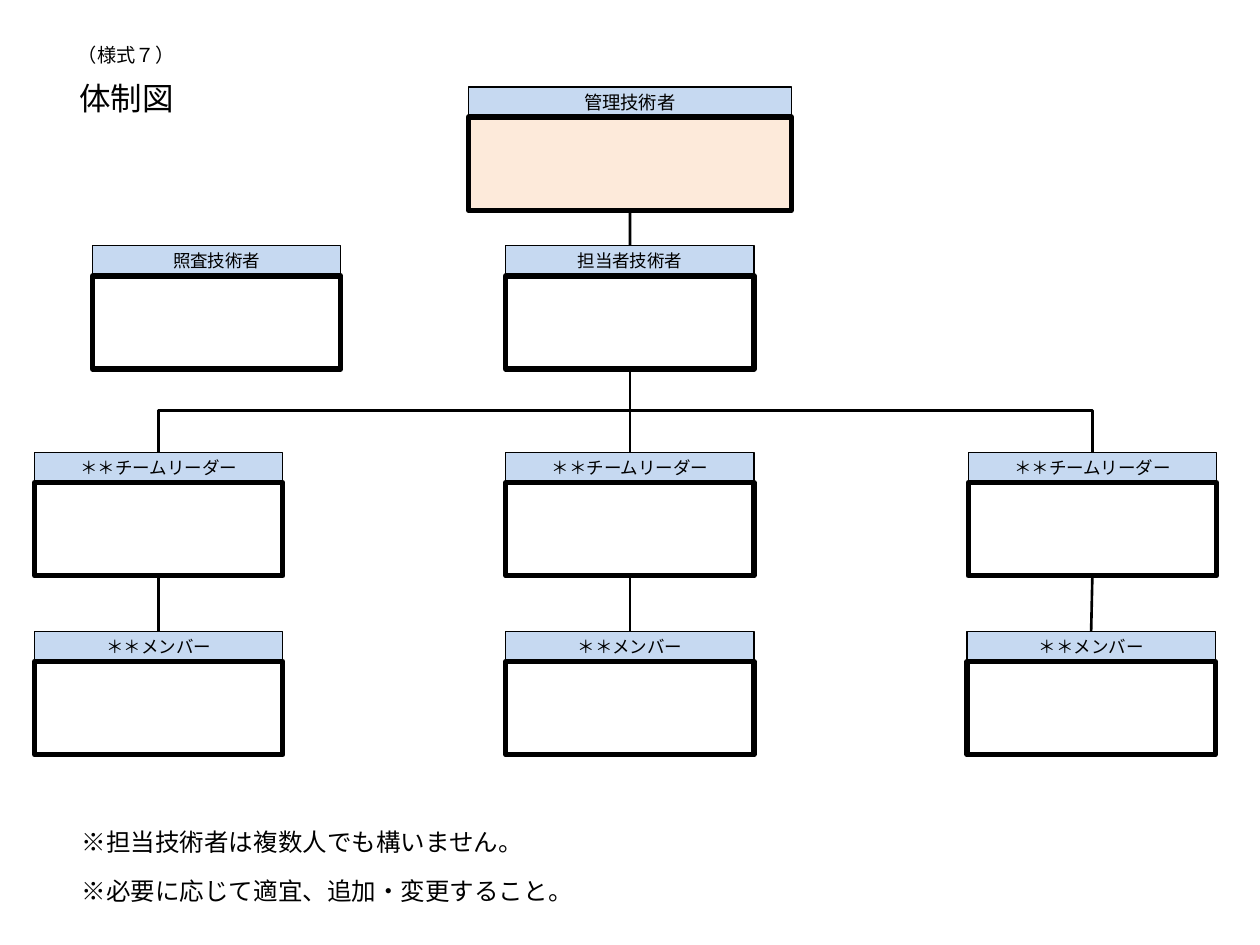
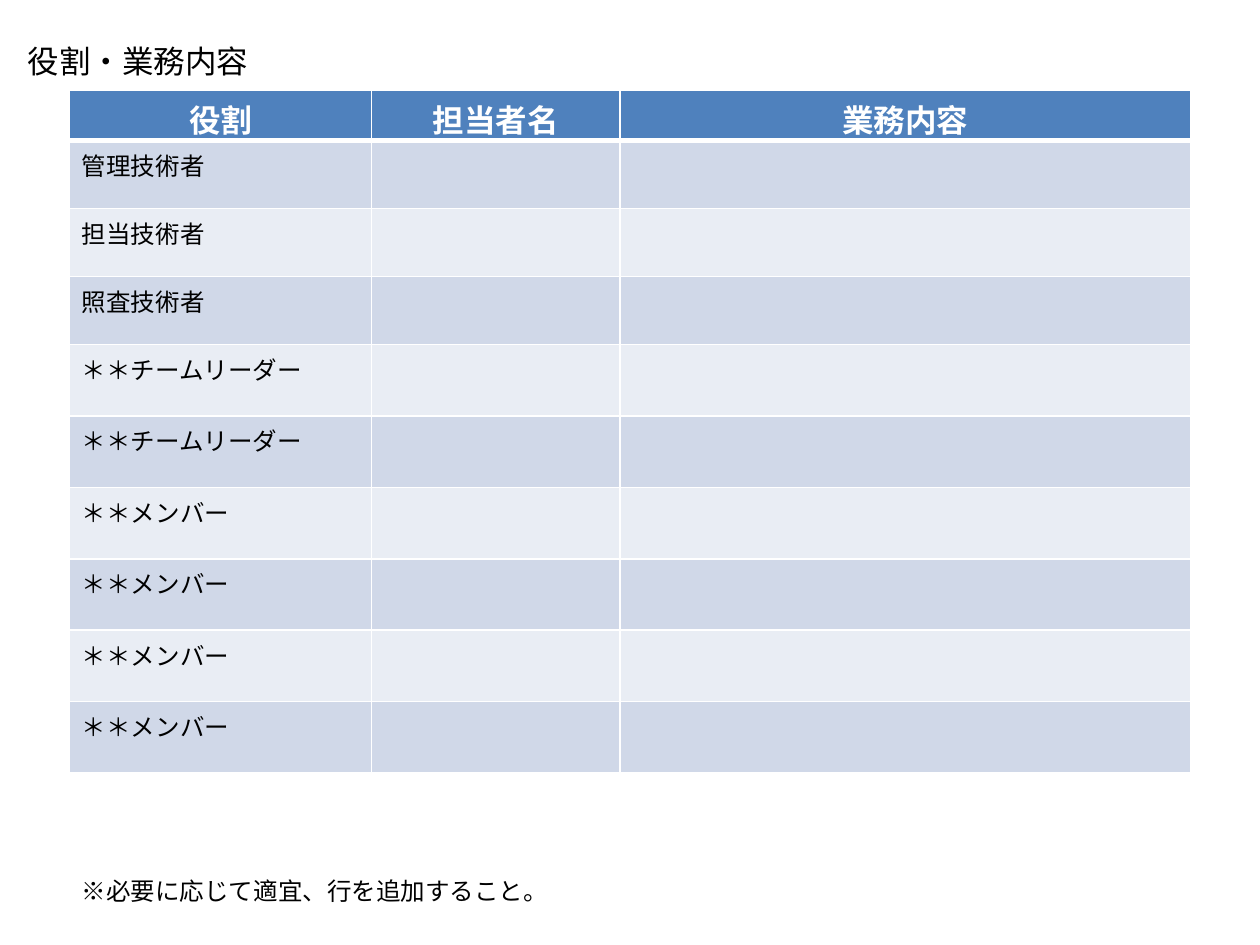
from lxml import etree
from pptx import Presentation
from pptx.dml.color import RGBColor
from pptx.enum.shapes import MSO_CONNECTOR, MSO_SHAPE
from pptx.enum.text import MSO_ANCHOR, MSO_AUTO_SIZE, PP_ALIGN
from pptx.oxml.ns import qn
from pptx.util import Inches, Pt

RECT = MSO_SHAPE.RECTANGLE
STRAIGHT, ELBOW = MSO_CONNECTOR.STRAIGHT, MSO_CONNECTOR.ELBOW
MIDDLE, TOP = MSO_ANCHOR.MIDDLE, MSO_ANCHOR.TOP
LEFT, CENTER = PP_ALIGN.LEFT, PP_ALIGN.CENTER
NO_FIT = MSO_AUTO_SIZE.NONE

FONT = "Noto Sans CJK JP"
COLORS = {
    "ink": "000000",
    "paper": "FFFFFF",
    "label": "C6D9F1",
    "chief": "FDEADA",
    "head": "4F81BD",
    "odd": "D0D8E8",
    "even": "E9EDF4",
}
TOP_SIDE, BOTTOM_SIDE = 0, 2
LABEL_H, BODY_H = 0.24, 0.74
BOX_W = 1.97
LEADER, MEMBER = "＊＊チームリーダー", "＊＊メンバー"
ROLES = ["管理技術者", "担当技術者", "照査技術者"] + [LEADER] * 2 + [MEMBER] * 4
HEADS = ["役割", "担当者名", "業務内容"]
COL_WIDTHS = [2.4, 1.97, 4.53]
ROW_HEIGHTS = [0.39] + [0.54] * 3 + [3.4 / 6] * 6


def color(name):
    return RGBColor.from_string(COLORS[name])


def add_run(para, text, size, ink="ink", bold=False, align=LEFT):
    para.alignment = align
    run = para.add_run()
    run.text = text
    font = run.font
    font.name, font.size, font.bold = FONT, Pt(size), bold
    font.color.rgb = color(ink)
    east = etree.SubElement(font._element, qn("a:ea"))
    east.set("typeface", FONT)


def set_frame(frame, wrap):
    frame.word_wrap = wrap
    frame.auto_size = NO_FIT
    frame.vertical_anchor = MIDDLE


def add_title(slide, text, left, top, width):
    title = slide.shapes.title
    title.left, title.top = Inches(left), Inches(top)
    title.width, title.height = Inches(width), Inches(0.4)
    set_frame(title.text_frame, True)
    add_run(title.text_frame.paragraphs[0], text, 18)


def add_text(slide, text, left, top, width, height, size):
    box = slide.shapes.add_textbox(*map(Inches, (left, top, width, height)))
    set_frame(box.text_frame, True)
    add_run(box.text_frame.paragraphs[0], text, size)


def add_note(slide, text, top=6.9):
    add_text(slide, text, 0.55, top, 5.71, 0.34, 14)


def add_rect(shapes, left, top, width, height, fill, weight):
    rect = shapes.add_shape(RECT, *map(Inches, (left, top, width, height)))
    rect.shadow.inherit = False
    rect.fill.solid()
    rect.fill.fore_color.rgb = color(fill)
    rect.line.color.rgb = color("ink")
    rect.line.width = Pt(weight)
    return rect


def add_post(slide, text, mid, top, width=BOX_W, fill="paper", size=10):
    """Add a labelled box centred on mid; return its label and its body."""
    shapes = slide.shapes.add_group_shape().shapes
    left = mid - width / 2
    label = add_rect(shapes, left, top, width, LABEL_H, "label", 0.75)
    body = add_rect(shapes, left, top + LABEL_H, width, BODY_H, fill, 3)
    frame = label.text_frame
    set_frame(frame, False)
    frame.margin_top = frame.margin_bottom = 0
    add_run(frame.paragraphs[0], text, size, align=CENTER)
    return label, body


def join(slide, upper, lower, kind=STRAIGHT):
    """Link the bottom of one post to the top of another."""
    line = slide.shapes.add_connector(kind, 0, 0, 0, 0)
    line.begin_connect(upper[1], BOTTOM_SIDE)
    line.end_connect(lower[0], TOP_SIDE)
    line.line.color.rgb = color("ink")
    line.line.width = Pt(1.5)
    etree.SubElement(line._element.spPr, qn("a:effectLst"))
    return line


def join_bent(slide, upper, lower):
    """Link two posts by an elbow that leaves downwards."""
    line = join(slide, upper, lower, ELBOW)
    to_right = line.end_x > line.begin_x
    wide, high = line.width, line.height
    mid_x, mid_y = line.left + wide // 2, line.top + high // 2
    line.left, line.top = mid_x - high // 2, mid_y - wide // 2
    line.width, line.height = high, wide
    xfrm = line._element.spPr.find(qn("a:xfrm"))
    xfrm.set("rot", str((270 if to_right else 90) * 60000))
    xfrm.set("flipH", "1" if to_right else "0")


def set_borders(cell, bottom):
    props = cell._tc.get_or_add_tcPr()
    for spot, side in enumerate("LRTB"):
        edge = etree.Element(qn("a:ln" + side))
        edge.set("w", str(Pt(bottom if side == "B" else 1)))
        fill = etree.SubElement(edge, qn("a:solidFill"))
        etree.SubElement(fill, qn("a:srgbClr")).set("val", COLORS["paper"])
        props.insert(spot, edge)


def set_cell(cell, fill, bottom=1):
    cell.fill.solid()
    cell.fill.fore_color.rgb = color(fill)
    cell.vertical_anchor = TOP
    set_borders(cell, bottom)


def add_roles(slide):
    area = map(Inches, (0.55, 0.72, sum(COL_WIDTHS), sum(ROW_HEIGHTS)))
    table = slide.shapes.add_table(len(ROW_HEIGHTS), len(HEADS), *area).table
    for col, width in zip(table.columns, COL_WIDTHS):
        col.width = Inches(width)
    for row, height in zip(table.rows, ROW_HEIGHTS):
        row.height = Inches(height)
    for col, text in enumerate(HEADS):
        cell = table.cell(0, col)
        set_cell(cell, "head", 3)
        cell.margin_top, cell.margin_bottom = Inches(0.07), 0
        para = cell.text_frame.paragraphs[0]
        para.line_spacing = 0.9
        add_run(para, text, 18, "paper", True, CENTER)
    for row, role in enumerate(ROLES, 1):
        for col in range(len(HEADS)):
            set_cell(table.cell(row, col), "odd" if row % 2 else "even")
        add_run(table.cell(row, 0).text_frame.paragraphs[0], role, 14)


def build_chart(slide):
    add_title(slide, "体制図", 0.53, 0.58, 1.2)
    add_text(slide, "（様式７）", 0.52, 0.29, 1.2, 0.29, 11)
    chief = add_post(slide, "管理技術者", 5, 0.69, 2.56, "chief", 10.5)
    add_post(slide, "照査技術者", 1.72, 1.95)
    staff = add_post(slide, "担当者技術者", 5, 1.95)
    join(slide, chief, staff)
    for lead_x, member_x in ((1.26, 1.26), (5, 5), (8.67, 8.66)):
        leader = add_post(slide, LEADER, lead_x, 3.59)
        member = add_post(slide, MEMBER, member_x, 5.01)
        join(slide, leader, member)
        link = join if lead_x == 5 else join_bent
        link(slide, staff, leader)
    add_note(slide, "※担当技術者は複数人でも構いません。", 6.51)
    add_note(slide, "※必要に応じて適宜、追加・変更すること。")


def build_roles(slide):
    add_title(slide, "役割・業務内容", 0.12, 0.28, 3.78)
    add_roles(slide)
    add_note(slide, "※必要に応じて適宜、行を追加すること。")


def main():
    deck = Presentation()
    deck.slide_width, deck.slide_height = Inches(10), Inches(7.5)
    layout = deck.slide_layouts.get_by_name("Title Only")
    for build in (build_chart, build_roles):
        build(deck.slides.add_slide(layout))
    deck.save("out.pptx")


if __name__ == "__main__":
    main()
